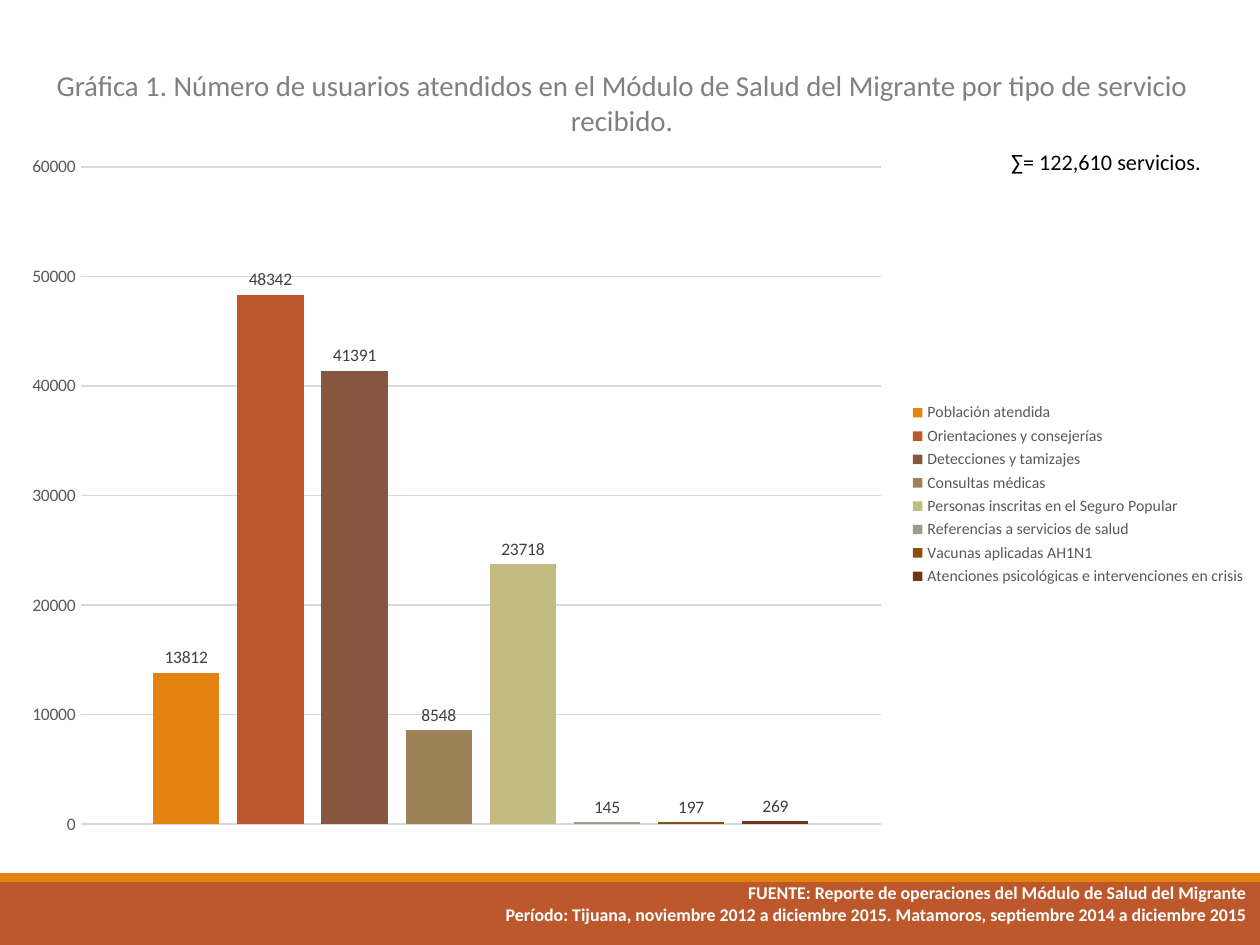
from lxml import etree
from pptx import Presentation
from pptx.chart.data import CategoryChartData
from pptx.dml.color import RGBColor
from pptx.enum.chart import XL_CHART_TYPE, XL_LABEL_POSITION, XL_LEGEND_POSITION, XL_TICK_MARK
from pptx.enum.shapes import MSO_SHAPE
from pptx.enum.text import PP_ALIGN
from pptx.util import Inches, Pt

CENTER, RIGHT = PP_ALIGN.CENTER, PP_ALIGN.RIGHT
FONT = "Calibri"
BLACK = RGBColor(0x00, 0x00, 0x00)
WHITE = RGBColor(0xFF, 0xFF, 0xFF)
TITLE_GRAY = RGBColor(0x80, 0x80, 0x80)
AXIS_GRAY = RGBColor(0x59, 0x59, 0x59)
LABEL_GRAY = RGBColor(0x40, 0x40, 0x40)
GRID_GRAY = RGBColor(0xD9, 0xD9, 0xD9)
ORANGE = RGBColor(0xE4, 0x83, 0x12)
RUST = RGBColor(0xBD, 0x58, 0x2C)

TITLE = ("Gráfica 1. Número de usuarios atendidos en el Módulo de Salud del "
         "Migrante por tipo de servicio recibido.")
TOTAL = "∑= 122,610 servicios."
SOURCE = [
    "FUENTE: Reporte de operaciones del Módulo de Salud del Migrante",
    "Período: Tijuana, noviembre 2012 a diciembre 2015. "
    "Matamoros, septiembre 2014 a diciembre 2015",
]
SERVICES = [
    ("Población atendida", 13812, ORANGE),
    ("Orientaciones y consejerías", 48342, RUST),
    ("Detecciones y tamizajes", 41391, RGBColor(0x86, 0x56, 0x40)),
    ("Consultas médicas", 8548, RGBColor(0x9B, 0x83, 0x57)),
    ("Personas inscritas en el Seguro Popular", 23718, RGBColor(0xC2, 0xBC, 0x80)),
    ("Referencias a servicios de salud", 145, RGBColor(0x94, 0xA0, 0x88)),
    ("Vacunas aplicadas AH1N1", 197, RGBColor(0x89, 0x4F, 0x0B)),
    ("Atenciones psicológicas e intervenciones en crisis", 269, RGBColor(0x71, 0x35, 0x1A)),
]
FOOTER_BANDS = [(7, 0.5, RUST), (6.93, 0.07, ORANGE)]  # top, height, colour
PLOT_LAYOUT = {"x": 0.064, "y": 0.035, "w": 0.636, "h": 0.933}  # share of the chart


def set_font(font, size, color, bold=False):
    font.name, font.size, font.bold = FONT, Pt(size), bold
    font.color.rgb = color


def add_text(slide, box, lines, size, color, align, bold=False, insets=(0.08, 0.04)):
    frame = slide.shapes.add_textbox(*map(Inches, box)).text_frame
    frame.word_wrap = True
    frame.margin_left = frame.margin_right = Inches(insets[0])
    frame.margin_top = frame.margin_bottom = Inches(insets[1])
    frame.text = "\n".join(lines)
    for paragraph in frame.paragraphs:
        paragraph.alignment = align
        set_font(paragraph.font, size, color, bold)


def fix_plot_area(chart):
    """Place the inner plot area by hand, which python-pptx cannot do."""
    plot_area = chart.plots[0]._element.getparent()
    ns = etree.QName(plot_area).namespace
    for old in plot_area.findall(f"{{{ns}}}layout"):
        plot_area.remove(old)
    layout = etree.Element(f"{{{ns}}}layout")
    manual = etree.SubElement(layout, f"{{{ns}}}manualLayout")
    settings = {"layoutTarget": "inner", "xMode": "edge", "yMode": "edge", **PLOT_LAYOUT}
    for tag, value in settings.items():
        etree.SubElement(manual, f"{{{ns}}}{tag}", val=str(value))
    plot_area.insert(0, layout)


def add_services_chart(slide, box):
    data = CategoryChartData()
    data.categories = ["1"]
    for name, users, _ in SERVICES:
        data.add_series(name, [users])
    chart = slide.shapes.add_chart(
        XL_CHART_TYPE.COLUMN_CLUSTERED, *map(Inches, box), data).chart
    chart.has_title = False
    set_font(chart.font, 10, BLACK)

    plot = chart.plots[0]
    plot.vary_by_categories = False
    plot.gap_width, plot.overlap = 219, -27
    for series, (_, _, color) in zip(plot.series, SERVICES):
        series.format.fill.solid()
        series.format.fill.fore_color.rgb = color
        labels = series.data_labels
        labels.show_value = True
        labels.position = XL_LABEL_POSITION.OUTSIDE_END
        set_font(labels.font, 10, LABEL_GRAY)

    chart.category_axis.visible = False
    axis = chart.value_axis
    axis.minimum_scale, axis.maximum_scale, axis.major_unit = 0, 60000, 10000
    axis.major_tick_mark = XL_TICK_MARK.NONE
    axis.format.line.fill.background()
    axis.major_gridlines.format.line.color.rgb = GRID_GRAY
    axis.major_gridlines.format.line.width = Pt(0.75)
    set_font(axis.tick_labels.font, 10, AXIS_GRAY)

    chart.has_legend = True
    chart.legend.position = XL_LEGEND_POSITION.RIGHT
    chart.legend.include_in_layout = False
    set_font(chart.legend.font, 9, AXIS_GRAY)
    fix_plot_area(chart)


def main():
    deck = Presentation()
    deck.slide_width, deck.slide_height = Inches(10), Inches(7.5)
    slide = deck.slides.add_slide(deck.slide_layouts[6])

    for top, height, color in FOOTER_BANDS:
        band = slide.shapes.add_shape(
            MSO_SHAPE.RECTANGLE, 0, Inches(top), deck.slide_width, Inches(height))
        band.shadow.inherit = False
        band.fill.solid()
        band.fill.fore_color.rgb = color
        band.line.fill.background()

    add_text(slide, (0.24, 0.5, 9.39, 0.64), [TITLE], 16.5, TITLE_GRAY, CENTER)
    add_text(slide, (7.63, 1.13, 2, 0.31), [TOTAL], 12.7, BLACK, RIGHT, insets=(0.1, 0.05))
    add_services_chart(slide, (0, 1.13, 9.99, 5.59))
    add_text(slide, (3.77, 6.96, 6.2, 0.42), SOURCE, 10.2, WHITE, RIGHT, bold=True)
    deck.save("out.pptx")


if __name__ == "__main__":
    main()
